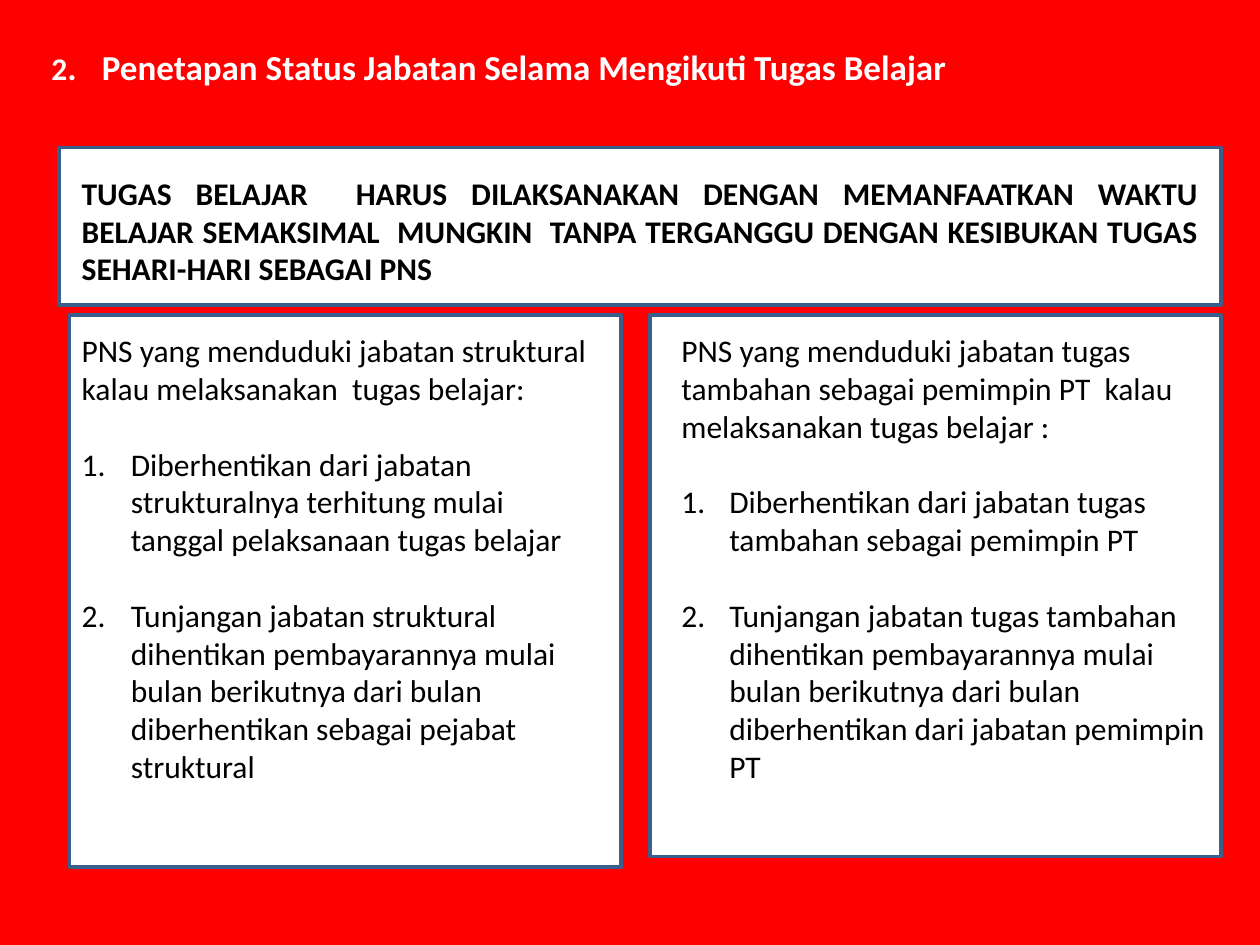
from lxml.etree import SubElement
from pptx import Presentation
from pptx.dml.color import RGBColor
from pptx.enum.shapes import MSO_SHAPE
from pptx.enum.text import MSO_AUTO_SIZE, PP_ALIGN
from pptx.oxml.ns import qn
from pptx.util import Inches, Pt

COLORS = {"red": "FF0000", "white": "FFFFFF", "blue": "3A5F8C", "black": "000000"}
BODY = {"name": "Calibri", "size": Pt(18), "bold": False}
STRONG = {**BODY, "bold": True}
TITLE = {**STRONG, "size": Pt(20)}
LINE_GAP = Pt(21.6)  # one line of body text

# Each column: panel place, text place, hanging indent, introduction, numbered items
COLUMNS = [
    ((0.55, 2.5, 4.38, 4.38), (0.55, 2.58, 4.22, 3.74), 0.39,
     "PNS yang menduduki jabatan struktural kalau melaksanakan  tugas belajar:",
     ["Diberhentikan dari jabatan strukturalnya terhitung mulai tanggal "
      "pelaksanaan tugas belajar",
      "Tunjangan jabatan struktural dihentikan pembayarannya mulai bulan "
      "berikutnya dari bulan diberhentikan sebagai pejabat struktural"]),
    ((5.16, 2.5, 4.53, 4.3), (5.31, 2.58, 4.38, 3.74), 0.38,
     "PNS yang menduduki jabatan tugas tambahan sebagai pemimpin PT  kalau "
     "melaksanakan tugas belajar :",
     ["Diberhentikan dari jabatan tugas tambahan sebagai pemimpin PT",
      "Tunjangan jabatan tugas tambahan dihentikan pembayarannya mulai bulan "
      "berikutnya dari bulan diberhentikan dari jabatan pemimpin PT"]),
]


def color(name):
    return RGBColor.from_string(COLORS[name])


def add_panel(page, place):
    panel = page.shapes.add_shape(MSO_SHAPE.RECTANGLE, *map(Inches, place))
    panel.shadow.inherit = False
    panel.fill.solid()
    panel.fill.fore_color.rgb = color("white")
    panel.line.color.rgb = color("blue")
    panel.line.width = Pt(2)


def add_text_box(page, place):
    frame = page.shapes.add_textbox(*map(Inches, place)).text_frame
    frame.word_wrap = True
    frame.auto_size = MSO_AUTO_SIZE.SHAPE_TO_FIT_TEXT
    return frame


def add_span(para, text, font_values, color_name="black"):
    span = para.add_run()
    span.text = text
    for attribute, value in font_values.items():
        setattr(span.font, attribute, value)
    span.font.color.rgb = color(color_name)


def hang(para, indent):
    properties = para._p.get_or_add_pPr()
    properties.set("marL", str(Inches(indent)))
    properties.set("indent", str(-Inches(indent)))
    return properties


def add_column(page, panel_place, text_place, indent, introduction, items):
    add_panel(page, panel_place)
    frame = add_text_box(page, text_place)
    add_span(frame.paragraphs[0], introduction, BODY)
    for item in items:
        para = frame.add_paragraph()
        para.space_before = LINE_GAP
        SubElement(hang(para, indent), qn("a:buAutoNum"), type="arabicPeriod")
        add_span(para, item, BODY)


def main():
    deck = Presentation()
    deck.slide_width, deck.slide_height = Inches(10), Inches(7.5)
    page = deck.slides.add_slide(deck.slide_layouts[6])
    page.background.fill.solid()
    page.background.fill.fore_color.rgb = color("red")

    # Title with a smaller number
    title = add_text_box(page, (0.31, 0.31, 9.38, 0.44)).paragraphs[0]
    hang(title, 0.4)
    add_span(title, "2", STRONG, "white")
    add_span(title, ".\tPenetapan Status Jabatan Selama Mengikuti Tugas Belajar",
             TITLE, "white")

    # Two columns of rules
    for column in COLUMNS:
        add_column(page, *column)

    # Main statement
    add_panel(page, (0.47, 1.17, 9.22, 1.25))
    statement = add_text_box(page, (0.55, 1.33, 9.06, 1.01)).paragraphs[0]
    statement.alignment = PP_ALIGN.JUSTIFY
    add_span(statement,
             "TUGAS BELAJAR  HARUS DILAKSANAKAN DENGAN MEMANFAATKAN WAKTU "
             "BELAJAR SEMAKSIMAL  MUNGKIN  TANPA TERGANGGU DENGAN KESIBUKAN "
             "TUGAS SEHARI-HARI SEBAGAI PNS ", STRONG)

    deck.save("out.pptx")


if __name__ == "__main__":
    main()
